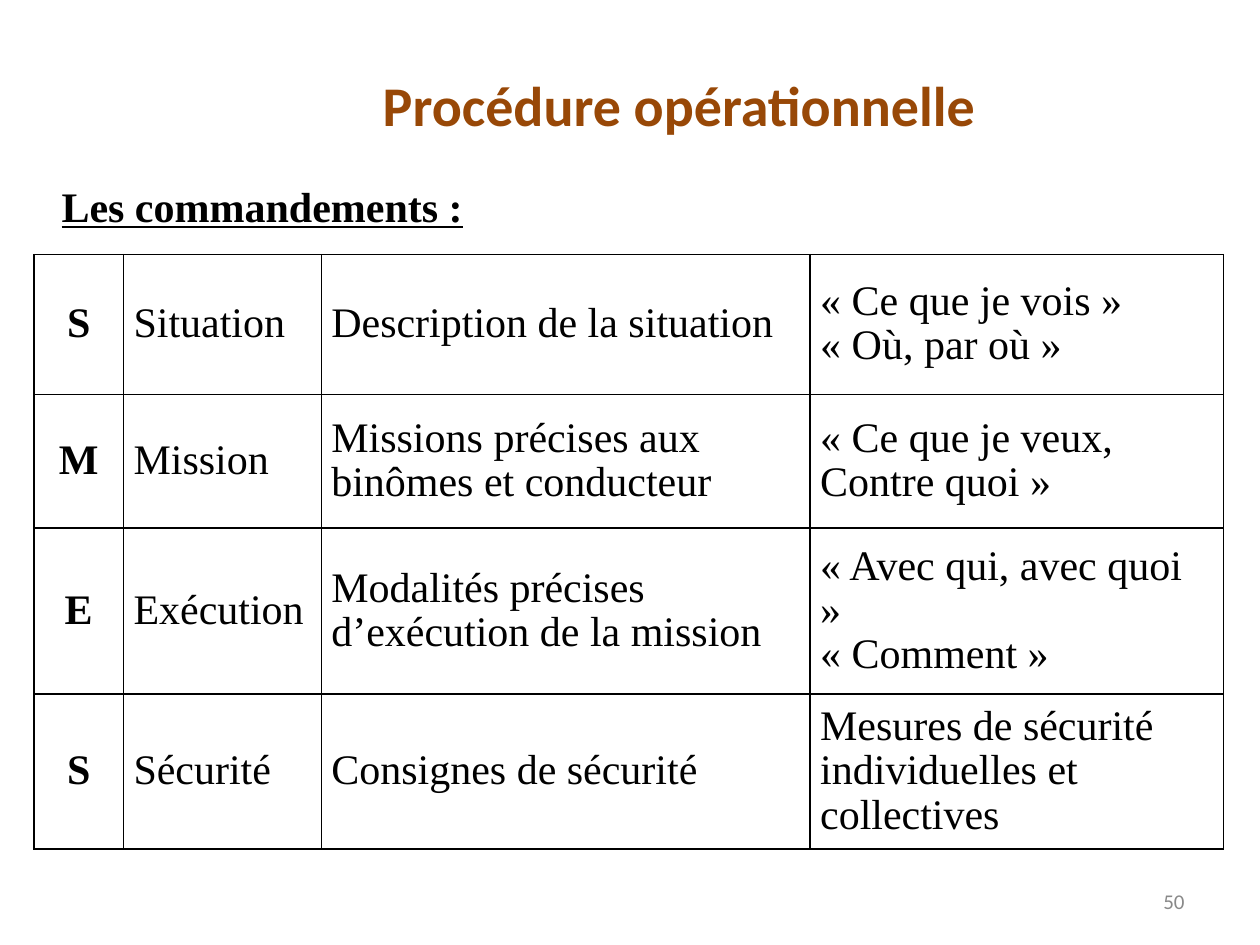
from dataclasses import dataclass

from lxml import etree
from pptx import Presentation
from pptx.dml.color import RGBColor
from pptx.enum.text import MSO_ANCHOR, PP_ALIGN
from pptx.oxml.ns import qn
from pptx.util import Inches, Pt

LEFT, CENTER, RIGHT = PP_ALIGN.LEFT, PP_ALIGN.CENTER, PP_ALIGN.RIGHT
TOP, MIDDLE = MSO_ANCHOR.TOP, MSO_ANCHOR.MIDDLE


@dataclass(frozen=True)
class Theme:
    heading_font: str = "Calibri"
    body_font: str = "Times New Roman"
    title_color: str = "984807"
    text_color: str = "000000"
    number_color: str = "898989"
    title_size: int = 32
    body_size: int = 24
    number_size: int = 12
    border_width: int = 1
    cell_margin: float = 0.08
    cell_line_spacing: float = 0.95


THEME = Theme()


@dataclass(frozen=True)
class TextStyle:
    font: str
    size: int
    color: str
    bold: bool = False
    underline: bool = False
    align: PP_ALIGN = LEFT


@dataclass(frozen=True)
class Label:
    text: str
    left: float
    top: float
    width: float
    height: float
    style: TextStyle
    anchor: MSO_ANCHOR = MIDDLE


@dataclass(frozen=True)
class Order:
    letter: str
    name: str
    description: str
    wording: str


CELL_STYLE = TextStyle(THEME.body_font, THEME.body_size, THEME.text_color)
LETTER_STYLE = TextStyle(THEME.body_font, THEME.body_size, THEME.text_color,
                         bold=True, align=CENTER)

LABELS = [
    Label("50", 7.17, 6.95, 2.33, 0.4,
          TextStyle(THEME.heading_font, THEME.number_size, THEME.number_color, align=RIGHT)),
    Label("Procédure opérationnelle", 1.06, 0.3, 8.66, 1.05,
          TextStyle(THEME.heading_font, THEME.title_size, THEME.title_color,
                    bold=True, align=CENTER)),
    Label("Les commandements :", 0.39, 1.38, 3.62, 0.51,
          TextStyle(THEME.body_font, THEME.body_size, THEME.text_color,
                    bold=True, underline=True), TOP),
]

ORDERS = [
    Order("S", "Situation", "Description de la situation",
          "« Ce que je vois »\n« Où, par où »"),
    Order("M", "Mission", "Missions précises aux binômes et conducteur",
          "« Ce que je veux,\nContre quoi »"),
    Order("E", "Exécution", "Modalités précises d’exécution de la mission",
          "« Avec qui, avec quoi »\n« Comment »"),
    Order("S", "Sécurité", "Consignes de sécurité",
          "Mesures de sécurité individuelles et collectives"),
]
COLUMN_WIDTHS = [0.71, 1.57, 3.88, 3.28]
ROW_HEIGHTS = [1.11, 1.06, 1.32, 1.23]


def write_text(frame, text: str, style: TextStyle) -> None:
    frame.text = text
    for para in frame.paragraphs:
        para.alignment = style.align
        para.font.name = style.font
        para.font.size = Pt(style.size)
        para.font.bold = style.bold
        para.font.underline = style.underline
        para.font.color.rgb = RGBColor.from_string(style.color)


def add_label(slide, label: Label) -> None:
    box = slide.shapes.add_textbox(Inches(label.left), Inches(label.top),
                                   Inches(label.width), Inches(label.height))
    box.text_frame.word_wrap = True
    box.text_frame.vertical_anchor = label.anchor
    write_text(box.text_frame, label.text, label.style)


def add_borders(cell) -> None:
    properties = cell._tc.get_or_add_tcPr()
    for position, side in enumerate(("lnL", "lnR", "lnT", "lnB")):
        line = etree.Element(qn(f"a:{side}"), w=str(Pt(THEME.border_width)))
        fill = etree.SubElement(line, qn("a:solidFill"))
        etree.SubElement(fill, qn("a:srgbClr"), val=THEME.text_color)
        properties.insert(position, line)


def fill_cell(cell, text: str, style: TextStyle) -> None:
    cell.fill.background()
    cell.vertical_anchor = MIDDLE
    cell.margin_left = cell.margin_right = Inches(THEME.cell_margin)
    cell.margin_top = cell.margin_bottom = 0
    write_text(cell.text_frame, text, style)
    for para in cell.text_frame.paragraphs:
        para.line_spacing = THEME.cell_line_spacing
    add_borders(cell)


def add_order_table(slide, orders: list[Order]) -> None:
    table = slide.shapes.add_table(
        len(orders), len(COLUMN_WIDTHS), Inches(0.27), Inches(2.02),
        Inches(sum(COLUMN_WIDTHS)), Inches(sum(ROW_HEIGHTS))).table
    table.first_row = table.horz_banding = False
    for column, width in zip(table.columns, COLUMN_WIDTHS):
        column.width = Inches(width)
    for row, height, order in zip(table.rows, ROW_HEIGHTS, orders):
        row.height = Inches(height)
        texts = (order.letter, order.name, order.description, order.wording)
        for index, (cell, text) in enumerate(zip(row.cells, texts)):
            fill_cell(cell, text, CELL_STYLE if index else LETTER_STYLE)


def main() -> None:
    deck = Presentation()
    deck.slide_width, deck.slide_height = Inches(10), Inches(7.5)
    slide = deck.slides.add_slide(deck.slide_layouts[6])
    for label in LABELS:
        add_label(slide, label)
    add_order_table(slide, ORDERS)
    deck.save("out.pptx")


if __name__ == "__main__":
    main()
